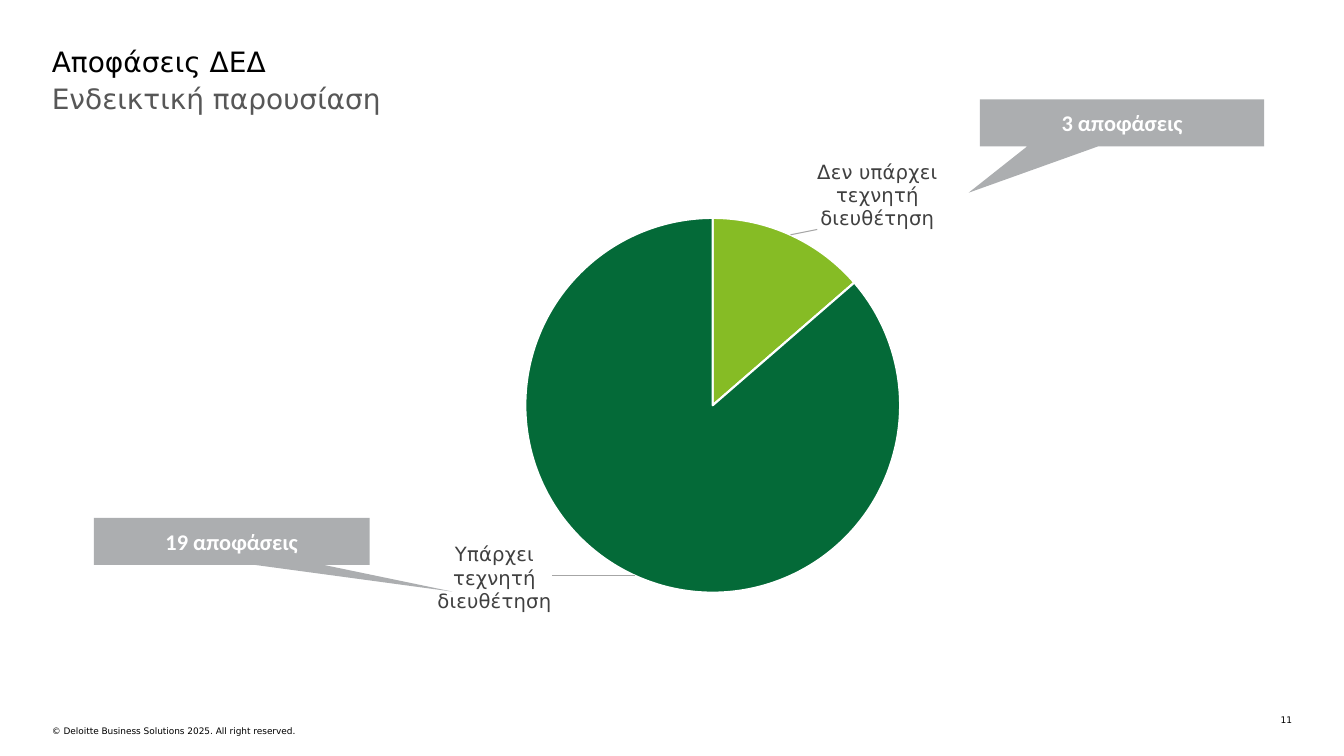
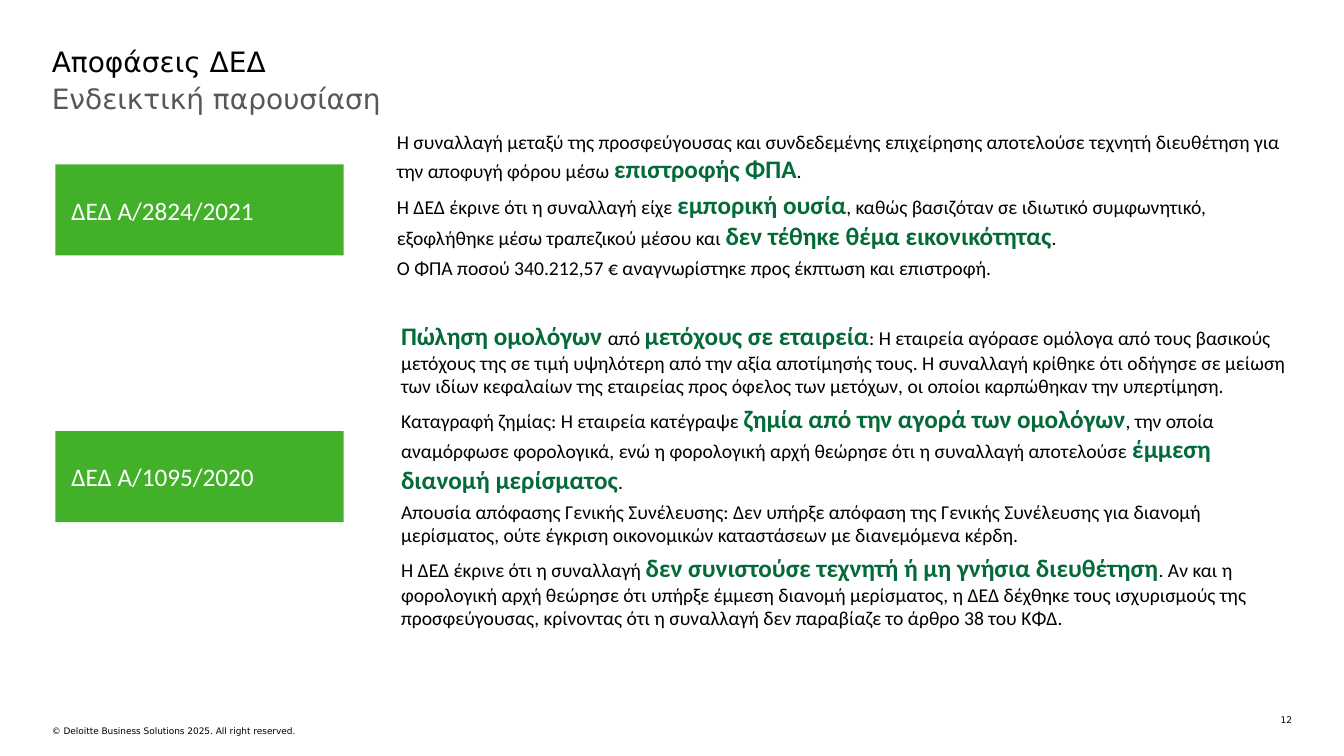
"""Build two slides on the decisions of the ΔΕΔ."""
import lxml.etree
import pptx
import pptx.chart.data
import pptx.dml.color
import pptx.enum.chart
import pptx.enum.shapes
import pptx.enum.text
import pptx.oxml.ns
import pptx.util

Pt = pptx.util.Pt
qn = pptx.oxml.ns.qn
SHAPES = pptx.enum.shapes.MSO_SHAPE
ALIGN = pptx.enum.text.PP_ALIGN
ANCHOR = pptx.enum.text.MSO_ANCHOR

COLORS = {
    "black": "000000",
    "white": "FFFFFF",
    "subtitle": "575757",
    "label": "404040",
    "leader": "A6A6A6",
    "callout": "ACAEB0",
    "lime": "86BC25",
    "green": "43B02A",
    "dark_green": "046A38",
}
HEADING_FONT = "DejaVu Sans"
TEXT_FONT = "Calibri"

TITLE = "Αποφάσεις ΔΕΔ"
SUBTITLE = "Ενδεικτική παρουσίαση"
COPYRIGHT = "© Deloitte Business Solutions 2025. All right reserved."

SLICES = [
    ("Label A", 3, "lime", "Δεν υπάρχει τεχνητή διευθέτηση", (0.03, 0)),
    ("Label F", 19, "dark_green", "Υπάρχει τεχνητή διευθέτηση", (-0.1, -0.07)),
]
CALLOUTS = [
    ("19 αποφάσεις", (67, 370, 197, 33.5), (0.8, 1.07)),
    ("3 αποφάσεις", (700, 71, 203, 33.5), (-0.54, 1.49)),
]
DECISIONS = [
    ("ΔΕΔ Α/2824/2021", 117.5, (283.5, 93, 636.5, 107), [
        "Η συναλλαγή μεταξύ της προσφεύγουσας και συνδεδεμένης επιχείρησης "
        "αποτελούσε τεχνητή διευθέτηση για την αποφυγή φόρου μέσω "
        "*επιστροφής ΦΠΑ*.",
        "Η ΔΕΔ έκρινε ότι η συναλλαγή είχε *εμπορική ουσία*, καθώς βασιζόταν "
        "σε ιδιωτικό συμφωνητικό, εξοφλήθηκε μέσω τραπεζικού μέσου και "
        "*δεν τέθηκε θέμα εικονικότητας*.",
        "Ο ΦΠΑ ποσού 340.212,57 € αναγνωρίστηκε προς έκπτωση και επιστροφή.",
    ]),
    ("ΔΕΔ Α/1095/2020", 308, (286.5, 229, 636.5, 223), [
        "*Πώληση ομολόγων *από *μετόχους σε εταιρεία*: Η εταιρεία αγόρασε "
        "ομόλογα από τους βασικούς μετόχους της σε τιμή υψηλότερη από την αξία "
        "αποτίμησής τους. Η συναλλαγή κρίθηκε ότι οδήγησε σε μείωση των ιδίων "
        "κεφαλαίων της εταιρείας προς όφελος των μετόχων, οι οποίοι "
        "καρπώθηκαν την υπερτίμηση.",
        "Καταγραφή ζημίας: Η εταιρεία κατέγραψε *ζημία από την αγορά των "
        "ομολόγων*, την οποία αναμόρφωσε φορολογικά, ενώ η φορολογική αρχή "
        "θεώρησε ότι η συναλλαγή αποτελούσε *έμμεση διανομή μερίσματος*.",
        "Απουσία απόφασης Γενικής Συνέλευσης: Δεν υπήρξε απόφαση της Γενικής "
        "Συνέλευσης για διανομή μερίσματος, ούτε έγκριση οικονομικών "
        "καταστάσεων με διανεμόμενα κέρδη.",
        "Η ΔΕΔ έκρινε ότι η συναλλαγή *δεν συνιστούσε τεχνητή ή μη γνήσια "
        "διευθέτηση*. Αν και η φορολογική αρχή θεώρησε ότι υπήρξε έμμεση "
        "διανομή μερίσματος, η ΔΕΔ δέχθηκε τους ισχυρισμούς της "
        "προσφεύγουσας, κρίνοντας ότι η συναλλαγή δεν παραβίαζε το άρθρο 38 "
        "του ΚΦΔ.",
    ]),
]


def rgb(name):
    """Return the named colour."""
    return pptx.dml.color.RGBColor.from_string(COLORS[name])


def points(lengths):
    """Turn numbers into lengths in points."""
    return [Pt(length) for length in lengths]


def style_font(font, name, size, color, bold=False):
    """Set the look of a font."""
    font.name = name
    font.size = Pt(size)
    font.bold = bold
    font.color.rgb = rgb(color)


def style_frame(frame, margins=(0, 0, 0, 0), anchor=ANCHOR.TOP):
    """Set margins, wrapping and anchor of a text frame."""
    frame.word_wrap = True
    frame.auto_size = pptx.enum.text.MSO_AUTO_SIZE.NONE
    frame.vertical_anchor = anchor
    (frame.margin_left, frame.margin_top,
     frame.margin_right, frame.margin_bottom) = points(margins)


def fill_placeholder(box, place, text, color):
    """Move a placeholder and give it one plain line."""
    box.left, box.top, box.width, box.height = points(place)
    style_frame(box.text_frame)
    box.text_frame.text = text
    para = box.text_frame.paragraphs[0]
    para.alignment = ALIGN.LEFT
    para.space_before = Pt(0)
    properties = para._p.get_or_add_pPr()
    properties.set("marL", "0")
    properties.set("indent", "0")
    lxml.etree.SubElement(properties, qn("a:buNone"))
    style_font(para.font, HEADING_FONT, 20, color)


def add_small_text(page, place, text, size, align):
    """Add one line of footer text."""
    box = page.shapes.add_textbox(*points(place))
    style_frame(box.text_frame)
    para = box.text_frame.paragraphs[0]
    para.text = text
    para.alignment = align
    style_font(para.font, HEADING_FONT, size, "black")


def add_page(deck, number):
    """Add a page with title, subtitle and footer."""
    page = deck.slides.add_slide(deck.slide_layouts[1])
    fill_placeholder(page.shapes.title, (37, 32, 886, 55), TITLE, "black")
    fill_placeholder(page.placeholders[1], (37, 58, 886, 60), SUBTITLE, "subtitle")
    add_small_text(page, (898, 510, 25, 8), str(number), 6.5, ALIGN.RIGHT)
    add_small_text(page, (37, 518, 422, 16), COPYRIGHT, 6.4, ALIGN.LEFT)
    return page


def add_label_shape(page, preset, place, adjustments, fill, text, size,
                    left_margin=7, align=ALIGN.LEFT, bold=False):
    """Add a filled preset shape with white text."""
    shape = page.shapes.add_shape(preset, *points(place))
    for index, value in enumerate(adjustments):
        shape.adjustments[index] = value
    shape.shadow.inherit = False
    shape.fill.solid()
    shape.fill.fore_color.rgb = rgb(fill)
    shape.line.fill.background()
    style_frame(shape.text_frame, (left_margin, 7, 7, 7), ANCHOR.MIDDLE)
    para = shape.text_frame.paragraphs[0]
    para.text = text
    para.alignment = align
    style_font(para.font, TEXT_FONT, size, "white", bold)


def add_rich_text(page, place, texts):
    """Add paragraphs in which asterisks enclose emphasised words."""
    box = page.shapes.add_textbox(*points(place))
    frame = box.text_frame
    style_frame(frame)
    for index, text in enumerate(texts):
        para = frame.add_paragraph() if index else frame.paragraphs[0]
        para.space_before = Pt(4 if index else 0)
        style_font(para.font, TEXT_FONT, 14, "black")
        for position, piece in enumerate(text.split("*")):
            if piece:
                span = para.add_run()
                span.text = piece
                if position % 2:
                    style_font(span.font, TEXT_FONT, 18, "dark_green", True)


def set_layout(parent, index, **values):
    """Give a chart part a manual layout."""
    for old in parent.findall(qn("c:layout")):
        parent.remove(old)
    layout = lxml.etree.Element(qn("c:layout"))
    manual = lxml.etree.SubElement(layout, qn("c:manualLayout"))
    for tag, value in values.items():
        lxml.etree.SubElement(manual, qn("c:" + tag)).set("val", str(value))
    parent.insert(index, layout)


def add_leader_lines(labels):
    """Draw thin lines from moved labels to their slices."""
    show = labels.find(qn("c:showLeaderLines"))
    if show is None:
        show = lxml.etree.SubElement(labels, qn("c:showLeaderLines"))
    show.set("val", "1")
    leaders = lxml.etree.SubElement(labels, qn("c:leaderLines"))
    properties = lxml.etree.SubElement(leaders, qn("c:spPr"))
    line = lxml.etree.SubElement(properties, qn("a:ln"), w=str(Pt(0.75)))
    fill = lxml.etree.SubElement(line, qn("a:solidFill"))
    lxml.etree.SubElement(fill, qn("a:srgbClr"), val=COLORS["leader"])


def add_pie(page, place):
    """Add the pie of decisions with labels outside."""
    data = pptx.chart.data.CategoryChartData(number_format="#,##0.0")
    data.categories = [category for category, *_ in SLICES]
    data.add_series("Series 1", [value for _, value, *_ in SLICES])
    kind = pptx.enum.chart.XL_CHART_TYPE.PIE
    outside = pptx.enum.chart.XL_LABEL_POSITION.OUTSIDE_END
    chart = page.shapes.add_chart(kind, *points(place), data).chart
    chart.has_legend = False
    chart.has_title = False
    style_font(chart.font, HEADING_FONT, 10, "black")
    chart.plots[0].vary_by_categories = True
    series = chart.plots[0].series[0]
    labels = series.data_labels
    labels.show_value = True
    labels.show_category_name = True
    labels.number_format = "#,##0.0"
    labels.number_format_is_linked = False
    labels.position = outside
    style_font(labels.font, HEADING_FONT, 12, "label")
    for index, (_, _, color, text, _) in enumerate(SLICES):
        point = series.points[index]
        point.format.fill.solid()
        point.format.fill.fore_color.rgb = rgb(color)
        point.format.line.color.rgb = rgb("white")
        point.format.line.width = Pt(1.5)
        label = point.data_label
        label.text_frame.text = text
        label.text_frame.word_wrap = True
        style_font(label.text_frame.paragraphs[0].runs[0].font,
                   HEADING_FONT, 14, "label")
        label.position = outside
    root = chart._chartSpace
    for element, (*_, (x, y)) in zip(root.xpath(".//c:ser//c:dLbl"), SLICES):
        set_layout(element, 1, x=x, y=y)
        element.find(qn("c:showCatName")).set("val", "1")
    add_leader_lines(root.xpath(".//c:ser/c:dLbls")[0])
    set_layout(root.xpath(".//c:plotArea")[0], 0, layoutTarget="inner",
               xMode="edge", yMode="edge", x=0.17, y=0.11, w=0.67, h=0.69)


def main():
    """Build and save the deck."""
    deck = pptx.Presentation()
    deck.slide_width, deck.slide_height = points((960, 540))

    page = add_page(deck, 11)
    add_pie(page, (217.5, 113, 577.5, 388))
    for text, place, tip in CALLOUTS:
        add_label_shape(page, SHAPES.RECTANGULAR_CALLOUT, place, tip, "callout",
                        text, 16, align=ALIGN.CENTER, bold=True)

    page = add_page(deck, 12)
    for name, top, place, texts in DECISIONS:
        add_label_shape(page, SHAPES.PENTAGON, (39.5, top, 206, 65), (0,),
                        "green", name, 18, left_margin=11.5)
        add_rich_text(page, place, texts)

    deck.save("out.pptx")


if __name__ == "__main__":
    main()
